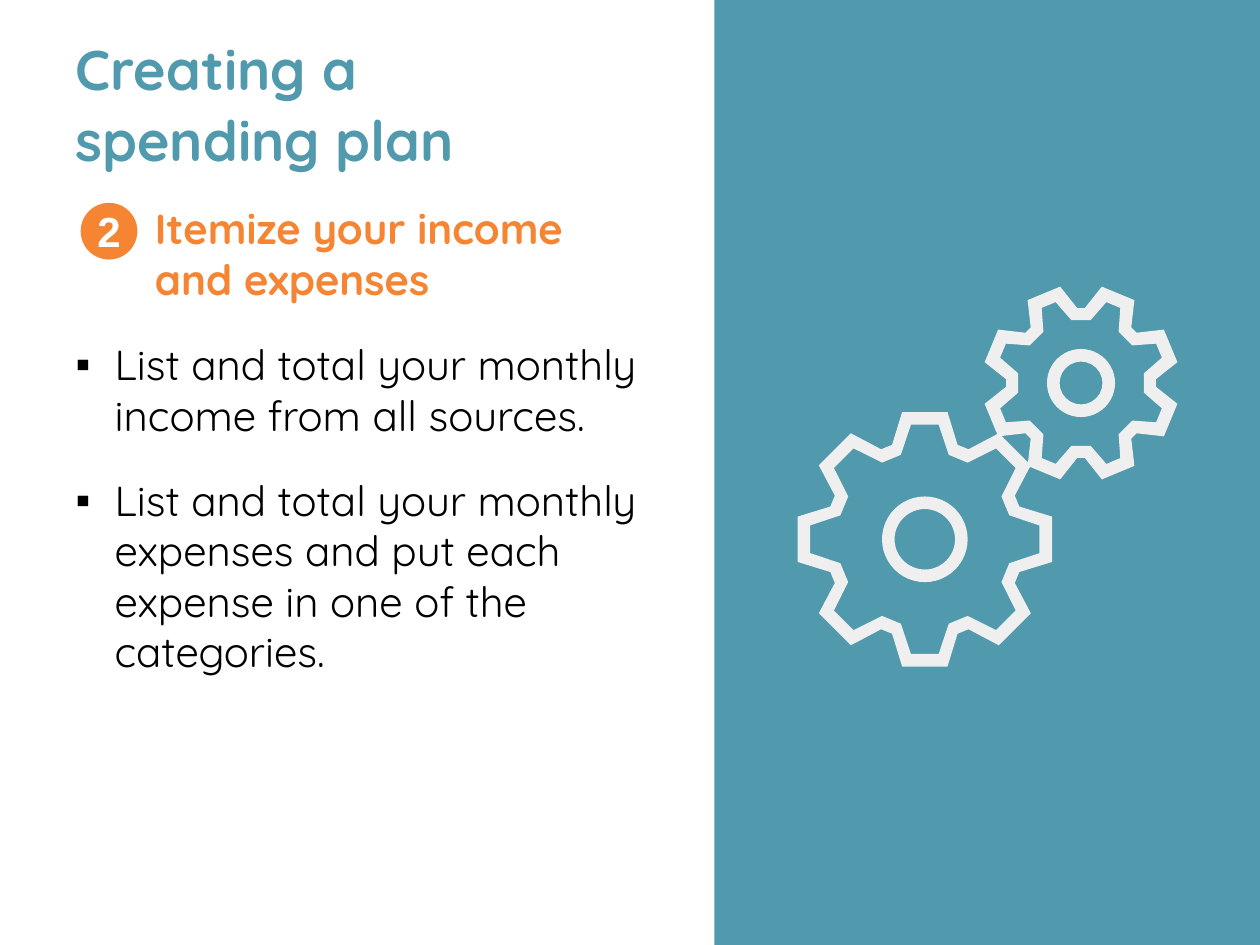
from math import cos, pi, sin

from lxml.etree import SubElement
from pptx import Presentation
from pptx.dml.color import RGBColor
from pptx.enum.shapes import MSO_SHAPE as Shape
from pptx.enum.text import MSO_ANCHOR as Anchor, MSO_AUTO_SIZE as AutoSize, PP_ALIGN as Align
from pptx.oxml.ns import qn
from pptx.util import Pt

PX = 9144  # 100 px to the inch
TEAL = RGBColor(0x51, 0x99, 0xAD)
ORANGE = RGBColor(0xF5, 0x84, 0x33)
PALE = RGBColor(0xEF, 0xEF, 0xEF)
BLACK = RGBColor(0, 0, 0)
WHITE = RGBColor(255, 255, 255)
TEETH = 8


def gear_contour(center, first_angle, root, tip):
    """Return the EMU points of a gear's edge.

    root and tip are (distance from center, half width) of one tooth,
    which is turned about the center once for each tooth.
    """
    (root_distance, root_half), (tip_distance, tip_half) = root, tip
    tooth = [(root_distance, -root_half), (tip_distance, -tip_half),
             (tip_distance, tip_half), (root_distance, root_half)]
    points = []
    for number in range(TEETH):
        angle = first_angle + 2 * pi * number / TEETH
        for along, across in tooth:
            x = center[0] + along * cos(angle) - across * sin(angle)
            y = center[1] + along * sin(angle) + across * cos(angle)
            points.append((round(x * PX), round(y * PX)))
    return points


def paint(shape, color):
    """Give the shape a plain fill with no line and no shadow."""
    shape.shadow.inherit = False
    shape.fill.solid()
    shape.fill.fore_color.rgb = color
    shape.line.fill.background()


presentation = Presentation()
presentation.slide_width, presentation.slide_height = 1000 * PX, 750 * PX
slide = presentation.slides.add_slide(presentation.slide_layouts[1])
shapes = slide.shapes

# Title and body placeholders
title, body = shapes.title, slide.placeholders[1]
for placeholder, box, anchor in (
    (title, (50, 42, 383, 100), Anchor.BOTTOM),
    (body, (50, 156, 517, 552), Anchor.TOP),
):
    placeholder.left, placeholder.top, placeholder.width, placeholder.height = (
        length * PX for length in box
    )
    frame = placeholder.text_frame
    frame.auto_size = AutoSize.NONE
    frame.word_wrap = True
    frame.vertical_anchor = anchor

title.text_frame.text = "Creating a spending plan"
title_paragraph = title.text_frame.paragraphs[0]
title_paragraph.alignment = Align.LEFT
title_paragraph.line_spacing = 1.05

# Step heading, then its bullets
body.text_frame.text = "\n".join([
    "Itemize your income \vand expenses",
    "List and total your monthly income from all sources.",
    "List and total your monthly expenses and put each expense in one of the categories.",
])
heading, *bullets = body.text_frame.paragraphs
for paragraph in (heading, *bullets):
    paragraph.space_before, paragraph.space_after = Pt(8), Pt(12)

heading_properties = heading._p.get_or_add_pPr()
heading_properties.set("marL", str(63 * PX))
heading_properties.set("indent", "0")
SubElement(heading_properties, qn("a:buNone"))
for bullet in bullets:
    bullet_properties = bullet._p.get_or_add_pPr()
    bullet_properties.set("marL", str(31 * PX))
    bullet_properties.set("indent", str(-31 * PX))
    SubElement(bullet_properties, qn("a:buFont"), typeface="Arial")
    SubElement(bullet_properties, qn("a:buChar"), char="▪")

# Step badge and side panel
badge = shapes.add_shape(Shape.OVAL, 64 * PX, 161 * PX, 45 * PX, 45 * PX)
paint(badge, ORANGE)
panel = shapes.add_shape(Shape.RECTANGLE, 567 * PX, 0, 433 * PX, 750 * PX)
paint(panel, TEAL)

badge_frame = badge.text_frame
for side in ("left", "top", "right", "bottom"):
    setattr(badge_frame, f"margin_{side}", 0)
badge_frame.vertical_anchor = Anchor.MIDDLE
badge_frame.text = "2"
badge_number = badge_frame.paragraphs[0]
badge_number.alignment = Align.CENTER

# Fonts
text_formats = [
    ([title_paragraph], {"name": "Quicksand", "size": Pt(32), "bold": True}, TEAL),
    ([heading], {"name": "Quicksand", "size": Pt(24), "bold": True}, ORANGE),
    (bullets, {"name": "Quicksand", "size": Pt(24), "bold": False}, BLACK),
    ([badge_number], {"name": "Arial", "size": Pt(24), "bold": True}, WHITE),
]
for paragraphs, font_format, color in text_formats:
    for run in (run for paragraph in paragraphs for run in paragraph.runs):
        for name, value in font_format.items():
            setattr(run.font, name, value)
        run.font.color.rgb = color

# Gears: a toothed rim between two contours, and a ring at the hub
large_gear = {
    "center": (734, 428), "first_angle": 0,
    "outside": {"root": (75, 26), "tip": (101, 18)},
    "inside": {"root": (67, 19), "tip": (91, 11)},
    "hub_radius": 34,
}
small_gear = {
    "center": (858, 304), "first_angle": pi / TEETH,
    "outside": {"root": (56, 20), "tip": (77, 14)},
    "inside": {"root": (49, 12), "tip": (67, 6)},
    "hub_radius": 27,
}
HUB_THICKNESS = 10

for gear in (large_gear, small_gear):
    center, hub_radius = gear["center"], gear["hub_radius"]
    outside, inside = (
        gear_contour(center, gear["first_angle"], **gear[edge])
        for edge in ("outside", "inside")
    )
    builder = shapes.build_freeform(*outside[0])
    builder.add_line_segments(outside[1:])
    builder.move_to(*inside[0])
    builder.add_line_segments(inside[1:])
    paint(builder.convert_to_shape(), PALE)

    hub_size = 2 * hub_radius
    hub = shapes.add_shape(Shape.DONUT, (center[0] - hub_radius) * PX,
                           (center[1] - hub_radius) * PX, hub_size * PX, hub_size * PX)
    hub.adjustments[0] = HUB_THICKNESS / hub_size
    paint(hub, PALE)

presentation.save("out.pptx")
